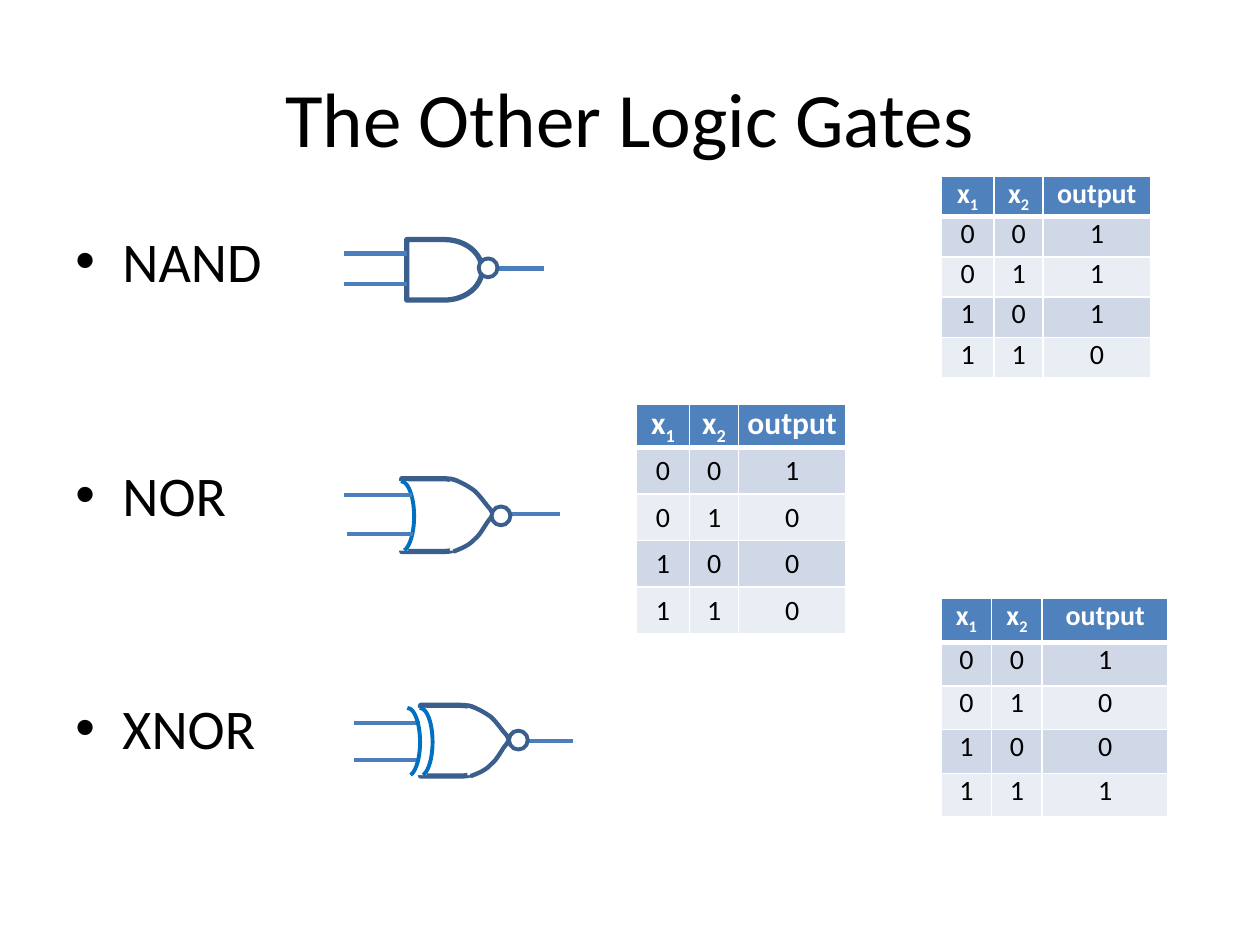
from dataclasses import dataclass

import pptx
import pptx.dml.color
import pptx.enum.shapes
import pptx.enum.text
import pptx.oxml
import pptx.oxml.ns
import pptx.util

Cm, Pt = pptx.util.Cm, pptx.util.Pt
RGBColor = pptx.dml.color.RGBColor
SHAPE = pptx.enum.shapes.MSO_SHAPE
ANCHOR = pptx.enum.text.MSO_ANCHOR
ALIGN = pptx.enum.text.PP_ALIGN

BLACK, WHITE = RGBColor(0, 0, 0), RGBColor(255, 255, 255)
HEADER = RGBColor(0x4F, 0x81, 0xBD)
BANDS = RGBColor(0xD0, 0xD8, 0xE8), RGBColor(0xE9, 0xED, 0xF4)
OUTLINE = RGBColor(0x3A, 0x5F, 0x8C)
WIRE = RGBColor(0x4B, 0x7E, 0xBC)
ARC_BLUE = RGBColor(0x00, 0x70, 0xC0)

BUBBLE = 0.38
# Bezier points of the pointed side, in cm from the body's top left corner
UPPER_CURVE = [(0.97, 0), (1.17, 0.05), (1.3, 0.13), (1.45, 0.23), (1.57, 0.33),
               (1.7, 0.53), (1.78, 0.61), (1.83, 0.69), (1.83, 0.71), (1.83, 0.71)]
LOWER_CURVE = [(1.04, 1.47), (1.22, 1.4), (1.35, 1.35), (1.47, 1.22), (1.6, 1.12),
               (1.7, 0.89), (1.78, 0.81), (1.83, 0.74), (1.83, 0.71), (1.83, 0.71)]


@dataclass
class Wire:
    x1: float
    x2: float
    y: float


@dataclass
class Gate:
    left: float
    top: float
    bubble: tuple[float, float]
    wires: list[Wire]
    scale: float = 1
    pointed: bool = True
    exclusive: bool = False


@dataclass
class TruthTable:
    left: float
    top: float
    cols: list[float]
    header_height: float
    row_height: float
    outputs: str
    header_size: int = 16
    padding: tuple[float, float] = (0, 0)


GATES = [
    Gate(8.2, 4.83, (9.65, 5.21),
         [Wire(6.93, 8.2, 5.11), Wire(6.93, 8.2, 5.72), Wire(9.7, 10.97, 5.41)],
         pointed=False),
    Gate(8.1, 9.65, (9.91, 10.21),
         [Wire(6.93, 8.31, 9.98), Wire(6.99, 8.33, 10.77), Wire(9.91, 11.28, 10.36)]),
    Gate(8.48, 14.22, (10.26, 14.73),
         [Wire(7.14, 8.46, 14.58), Wire(7.14, 8.46, 15.32), Wire(10.24, 11.56, 14.94)],
         scale=0.97, exclusive=True),
]
TABLES = [
    TruthTable(12.83, 8.15, [1.07, 0.99, 2.16], 0.84, 0.94, "1000", 18, (0.25, 0.13)),
    TruthTable(18.97, 3.56, [1.07, 0.99, 2.16], 0.81, 0.81, "1110"),
    TruthTable(18.97, 12.07, [1.02, 1.02, 2.54], 0.88, 0.88, "1001"),
]


def apply(obj, values: dict) -> None:
    for name, value in values.items():
        setattr(obj, name, value)


def add_run(p, text: str, size: float, color=BLACK, bold=False):
    r = p.add_run()
    r.text = text
    apply(r.font, {"name": "Calibri", "size": Pt(size), "bold": bold})
    r.font.color.rgb = color
    return r


def add_text(s, box: tuple, anchor):
    tf = s.shapes.add_textbox(*map(Cm, box)).text_frame
    apply(tf, {"word_wrap": True, "vertical_anchor": anchor})
    return tf


def style(sp, line=None, width: float = 0, fill=None) -> None:
    sp.shadow.inherit = False
    if fill is None:
        sp.fill.background()
    else:
        sp.fill.solid()
        sp.fill.fore_color.rgb = fill
    if line is None:
        sp.line.fill.background()
    else:
        sp.line.color.rgb = line
        sp.line.width = Pt(width)


def add_wire(group, wire: Wire) -> None:
    c = group.shapes.add_connector(pptx.enum.shapes.MSO_CONNECTOR.STRAIGHT,
                                   Cm(wire.x1), Cm(wire.y), Cm(wire.x2), Cm(wire.y))
    c.line.color.rgb = WIRE
    c.line.width = Pt(2.5)
    pptx.oxml.ns.qn("a:effectLst")
    c._element.spPr.append(pptx.oxml.parse_xml(
        f"<a:effectLst {pptx.oxml.ns.nsdecls('a')}/>"))


def sample_bezier(points: list, steps: int = 8) -> list:
    """Return points along a chain of cubic curves."""
    result = [points[0]]
    for i in range(0, len(points) - 1, 3):
        for t in (n / steps for n in range(1, steps + 1)):
            weights = (1 - t) ** 3, 3 * t * (1 - t) ** 2, 3 * t * t * (1 - t), t ** 3
            result.append(tuple(sum(w * pt[axis] for w, pt in zip(weights, points[i:i + 4]))
                                for axis in (0, 1)))
    return result


def add_gate(s, gate: Gate) -> None:
    group = s.shapes.add_group_shape()

    def part(kind, x, y, w, h, **look):
        """Add a shape placed from the body's corner and scaled with the gate."""
        k = gate.scale
        sp = group.shapes.add_shape(kind, Cm(gate.left + k * x), Cm(gate.top + k * y),
                                    Cm(k * w), Cm(k * h))
        style(sp, **look)
        return sp

    def back_arc(x):
        sp = part(SHAPE.ARC, x, 0.05, 0.53, 1.42, line=ARC_BLUE, width=2.25)
        sp.adjustments[0], sp.adjustments[1] = 162, 50.54

    body_size = (1.65, 1.47) if gate.pointed else (1.52, 1.22)
    part(SHAPE.FLOWCHART_DELAY, 0, 0, *body_size, line=OUTLINE, width=3)
    if gate.pointed:
        part(SHAPE.RECTANGLE, -0.1, 0.05, 0.23, 1.4, fill=WHITE)
        back_arc(-0.28)
    for wire in gate.wires:
        add_wire(group, wire)
    if gate.pointed:
        part(SHAPE.RECTANGLE, 0.97, 0, 0.76, 1.45, fill=WHITE)
        for curve in (UPPER_CURVE, LOWER_CURVE):
            points = [(Cm(gate.left + gate.scale * x), Cm(gate.top + gate.scale * y))
                      for x, y in sample_bezier(curve)]
            fb = group.shapes.build_freeform(*points[0])
            fb.add_line_segments(points[1:], close=False)
            style(fb.convert_to_shape(), OUTLINE, 2.5)
    if gate.exclusive:
        back_arc(-0.54)
    bubble = group.shapes.add_shape(SHAPE.OVAL, *map(Cm, (*gate.bubble, BUBBLE, BUBBLE)))
    style(bubble, OUTLINE, 2.25, WHITE)


def set_borders(cell, top: float, bottom: float) -> None:
    widths = {"lnL": 1, "lnR": 1, "lnT": top, "lnB": bottom}
    for i, (tag, width) in enumerate(widths.items()):
        cell._tc.get_or_add_tcPr().insert(i, pptx.oxml.parse_xml(
            f'<a:{tag} {pptx.oxml.ns.nsdecls("a")} w="{Pt(width)}"><a:solidFill>'
            f'<a:srgbClr val="{WHITE}"/></a:solidFill></a:{tag}>'))


def add_truth_table(s, spec_: TruthTable) -> None:
    heights = [spec_.header_height] + [spec_.row_height] * 4
    table = s.shapes.add_table(5, 3, Cm(spec_.left), Cm(spec_.top),
                               Cm(sum(spec_.cols)), Cm(sum(heights))).table
    for col, width in zip(table.columns, spec_.cols):
        col.width = Cm(width)
    for row, height in zip(table.rows, heights):
        row.height = Cm(height)
    rows = [["x1", "x2", "output"]]
    rows += [[*f"{n:02b}", out] for n, out in enumerate(spec_.outputs)]
    for i, texts in enumerate(rows):
        for j, text in enumerate(texts):
            cell = table.cell(i, j)
            side, edge = spec_.padding if i else (0, 0)
            apply(cell, {"margin_left": Cm(side), "margin_right": Cm(side),
                         "margin_top": Cm(edge), "margin_bottom": Cm(edge)})
            cell.fill.solid()
            cell.fill.fore_color.rgb = BANDS[(i - 1) % 2] if i else HEADER
            set_borders(cell, 3 if i == 1 else 1, 1 if i else 3)
            p = cell.text_frame.paragraphs[0]
            p.alignment = ALIGN.CENTER
            if i:
                add_run(p, text, 16)
                continue
            name, index = (text[0], text[1]) if j < 2 else (text, "")
            add_run(p, name, spec_.header_size, WHITE, True)
            if index:
                r = add_run(p, index, spec_.header_size, WHITE, True)
                r._r.get_or_add_rPr().set("baseline", "-25000")


def add_bullets(s, names: list[str]) -> None:
    tf = add_text(s, (1.27, 4.45, 5.51, 12.57), ANCHOR.TOP)
    for i, name in enumerate(names):
        p = tf.paragraphs[0] if i == 0 else tf.add_paragraph()
        p.space_before = Pt(95 if i else 0)
        pPr = p._p.get_or_add_pPr()
        pPr.set("marL", str(Cm(0.95)))
        pPr.set("indent", str(-Cm(0.95)))
        for xml in ('buFont {} typeface="Arial"', 'buChar {} char="•"'):
            pPr.append(pptx.oxml.parse_xml(f"<a:{xml.format(pptx.oxml.ns.nsdecls('a'))}/>"))
        add_run(p, name, 32)


def main() -> None:
    prs = pptx.Presentation()
    apply(prs, {"slide_width": Cm(25.4), "slide_height": Cm(19.05)})
    s = prs.slides.add_slide(prs.slide_layouts[6])
    p = add_text(s, (1.27, 0.76, 22.86, 3.18), ANCHOR.MIDDLE).paragraphs[0]
    p.alignment = ALIGN.CENTER
    add_run(p, "The Other Logic Gates", 44)
    add_bullets(s, ["NAND", "NOR", "XNOR"])
    for truth_table in TABLES:
        add_truth_table(s, truth_table)
    for gate in GATES:
        add_gate(s, gate)
    prs.save("out.pptx")


if __name__ == "__main__":
    main()
